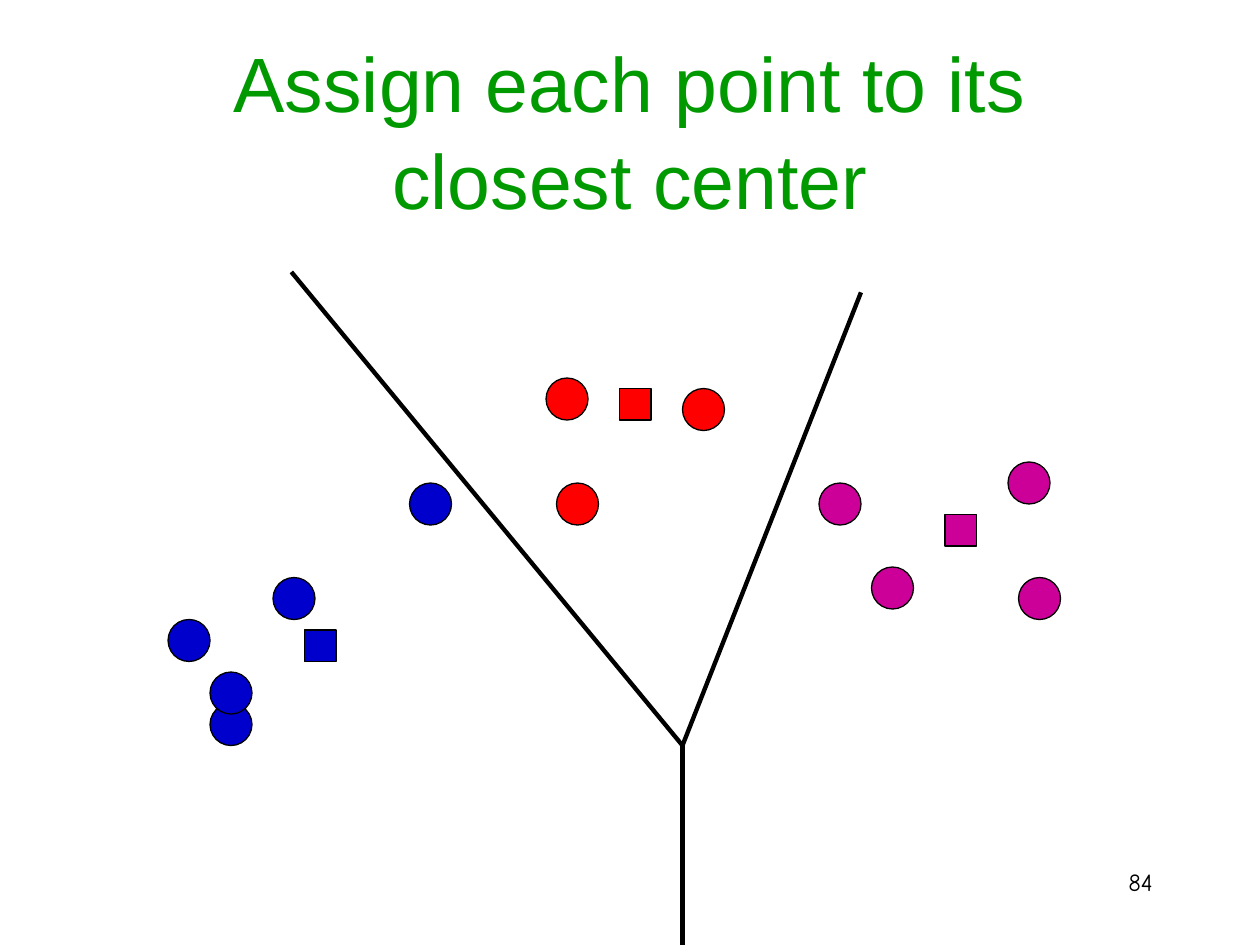
from pptx import Presentation
from pptx.dml.color import RGBColor
from pptx.enum.shapes import MSO_CONNECTOR, MSO_SHAPE
from pptx.enum.text import MSO_ANCHOR, PP_ALIGN
from pptx.oxml.ns import qn
from pptx.util import Cm, Pt
from lxml.etree import SubElement

WHITE = RGBColor(0xFF, 0xFF, 0xFF)
BLACK = RGBColor(0x00, 0x00, 0x00)
GREEN = RGBColor(0x00, 0x99, 0x00)
BLUE = RGBColor(0x00, 0x00, 0xCC)
RED = RGBColor(0xFF, 0x00, 0x00)
MAGENTA = RGBColor(0xCC, 0x00, 0x99)

# The diagram lies on a grid of twelve units to the inch
UNIT = 2.54 / 12
POINT_SIZE = 4
CENTER_SIZE = 3

# Colour, top-left corner of the center, top-left corners of its points
CLUSTERS = [
    (BLUE, (29, 60), [(20, 67), (16, 59), (26, 55), (39, 46), (20, 64)]),
    (RED, (59, 37), [(52, 36), (65, 37), (53, 46)]),
    (MAGENTA, (90, 49), [(96, 44), (97, 55), (78, 46), (83, 54)]),
]
JUNCTION = (65, 71)
BORDER_ENDS = [(27.75, 25.9), (82, 27.85), (65, 90)]


def grid(units):
    return Cm(units * UNIT)


class ClusterSlide:
    """Holds the style and the slide being drawn."""

    outline_width = Pt(0.75)
    border_width = Pt(2.5)

    def __init__(self, slide):
        self.slide = slide
        fill = slide.background.fill
        fill.solid()
        fill.fore_color.rgb = WHITE

    def text(self, words, box, font, size, color, align,
             anchor=MSO_ANCHOR.TOP, spacing=1.0):
        frame = self.slide.shapes.add_textbox(*map(Cm, box)).text_frame
        frame.word_wrap = True
        frame.vertical_anchor = anchor
        paragraph = frame.paragraphs[0]
        paragraph.text = words
        paragraph.alignment = align
        paragraph.line_spacing = spacing
        paragraph.font.name = font
        paragraph.font.size = Pt(size)
        paragraph.font.color.rgb = color

    def marker(self, kind, corner, size, color):
        x, y = map(grid, corner)
        marker = self.slide.shapes.add_shape(kind, x, y, grid(size), grid(size))
        marker.shadow.inherit = False
        marker.fill.solid()
        marker.fill.fore_color.rgb = color
        marker.line.color.rgb = BLACK
        marker.line.width = self.outline_width

    def border(self, start, end):
        border = self.slide.shapes.add_connector(
            MSO_CONNECTOR.STRAIGHT, *map(grid, start + end))
        border.line.color.rgb = BLACK
        border.line.width = self.border_width
        SubElement(border._element.spPr, qn("a:effectLst"))


def main():
    deck = Presentation()
    deck.slide_width, deck.slide_height = Cm(25.4), Cm(19.05)
    page = ClusterSlide(deck.slides.add_slide(deck.slide_layouts[6]))

    # Title and page number
    page.text("Assign each point to its closest center", (1.9, 0.99, 21.6, 3.18),
              "Arial", 44, GREEN, PP_ALIGN.CENTER, MSO_ANCHOR.MIDDLE, 1.05)
    page.text("84", (18.21, 17.35, 5.28, 1.27),
              "Comic Neue", 14, BLACK, PP_ALIGN.RIGHT)

    # Points and centers of each cluster
    for color, center, points in CLUSTERS:
        for point in points:
            page.marker(MSO_SHAPE.OVAL, point, POINT_SIZE, color)
        page.marker(MSO_SHAPE.RECTANGLE, center, CENTER_SIZE, color)

    # Borders between the clusters
    for end in BORDER_ENDS:
        page.border(JUNCTION, end)

    deck.save("out.pptx")


if __name__ == "__main__":
    main()
